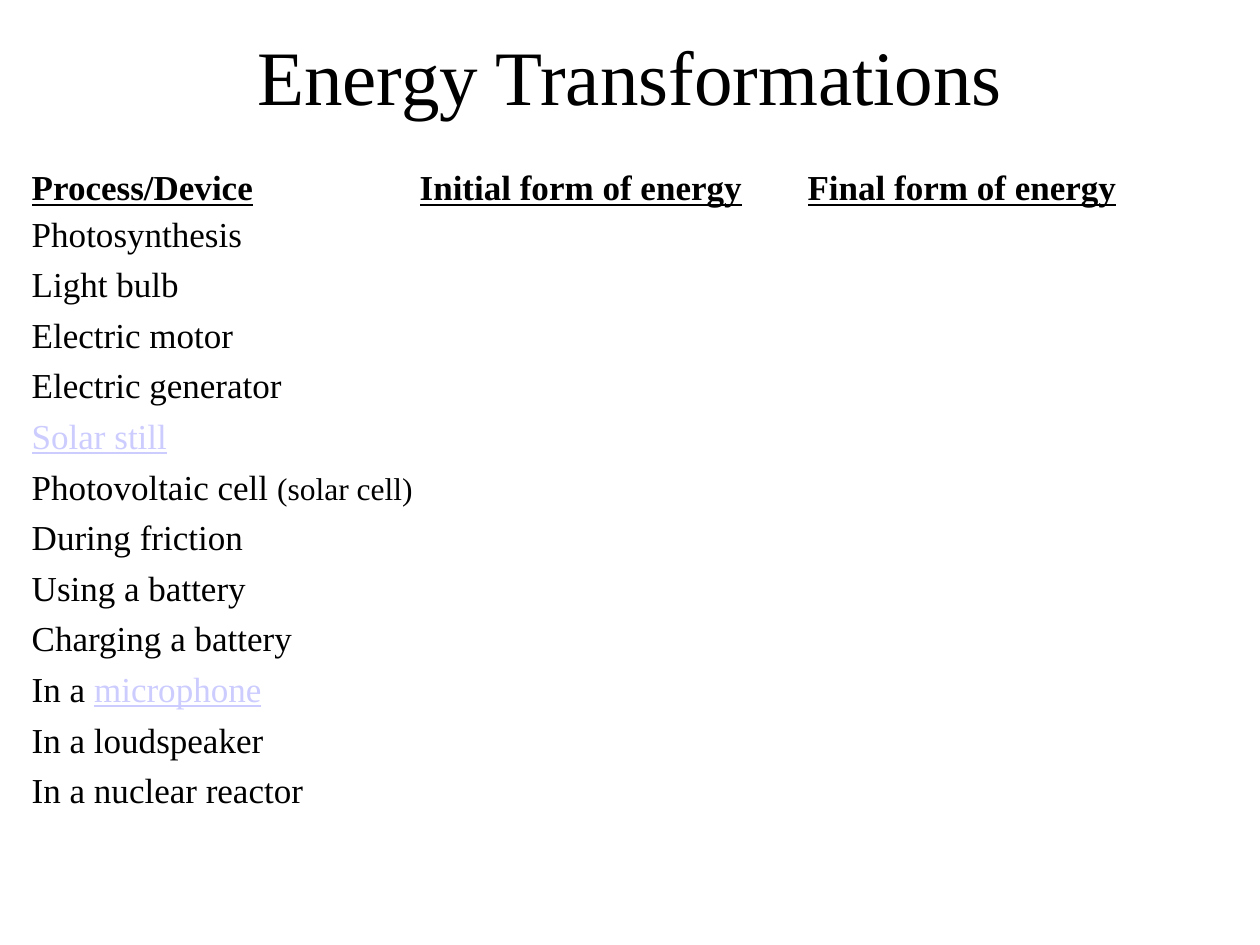
from pptx import Presentation
from pptx.dml.color import RGBColor
from pptx.enum.text import MSO_ANCHOR, PP_ALIGN
from pptx.util import Cm, Pt

FONT = "Times New Roman"
COLOURS = {"text": "000000", "link": "CCCCFF"}

HEADINGS = ["Process/Device", "Initial form of energy", "Final form of energy"]
HEADING = {"bold": True, "underline": True}
LINK = {"colour": "link", "underline": True}
SMALL = {"size": 18}

# Each process is a list of (text, style) pieces.
PROCESSES = [
    [("Photosynthesis", {})],
    [("Light bulb", {})],
    [("Electric motor", {})],
    [("Electric generator", {})],
    [("Solar still", LINK)],
    [("Photovoltaic cell ", {}), ("(solar cell)", SMALL)],
    [("During friction", {})],
    [("Using a battery", {})],
    [("Charging a battery", {})],
    [("In a ", {}), ("microphone", LINK)],
    [("In a loudspeaker", {})],
    [("In a nuclear reactor", {})],
]

COLUMN_WIDTHS = [Cm(7.82), Cm(7.82), Cm(8.05)]
HEADING_HEIGHT = Cm(0.84)
ROW_HEIGHT = Cm(1.02)


def format_font(font, size=20, colour="text", bold=False, underline=False):
    font.name = FONT
    font.size = Pt(size)
    font.bold = bold
    font.underline = underline
    font.color.rgb = RGBColor.from_string(COLOURS[colour])


def add_title(slide, text):
    title = slide.shapes.title
    title.left, title.top = Cm(1.9), Cm(0.84)
    title.width, title.height = Cm(21.6), Cm(3.18)
    text_frame = title.text_frame
    text_frame.text = text
    text_frame.vertical_anchor = MSO_ANCHOR.MIDDLE
    paragraph = text_frame.paragraphs[0]
    paragraph.alignment = PP_ALIGN.CENTER
    format_font(paragraph.font, size=44)
    for run in paragraph.runs:
        format_font(run.font, size=44)


def clear_cell(cell):
    """Remove the fill and margins, and centre the text vertically."""
    cell.fill.background()
    cell.margin_left = cell.margin_right = 0
    cell.margin_top = cell.margin_bottom = 0
    cell.vertical_anchor = MSO_ANCHOR.MIDDLE


def write_cell(cell, pieces):
    paragraph = cell.text_frame.paragraphs[0]
    for text, style in pieces:
        run = paragraph.add_run()
        run.text = text
        format_font(run.font, **style)


def add_energy_table(slide):
    row_count = len(PROCESSES) + 1
    height = HEADING_HEIGHT + ROW_HEIGHT * len(PROCESSES)
    table = slide.shapes.add_table(
        row_count, len(HEADINGS), Cm(0.64), Cm(3.39), sum(COLUMN_WIDTHS), height
    ).table
    table.first_row = table.horz_banding = False
    for column, width in zip(table.columns, COLUMN_WIDTHS):
        column.width = width
    for row in table.rows:
        row.height = ROW_HEIGHT
    table.rows[0].height = HEADING_HEIGHT

    for cell in table.iter_cells():
        clear_cell(cell)
    for index, heading in enumerate(HEADINGS):
        write_cell(table.cell(0, index), [(heading, HEADING)])
    for index, pieces in enumerate(PROCESSES, start=1):
        write_cell(table.cell(index, 0), pieces)


def main():
    presentation = Presentation()
    presentation.slide_width, presentation.slide_height = Cm(25.4), Cm(19.05)
    slide = presentation.slides.add_slide(presentation.slide_layouts[5])
    add_title(slide, "Energy Transformations\v")
    add_energy_table(slide)
    presentation.save("out.pptx")


if __name__ == "__main__":
    main()
